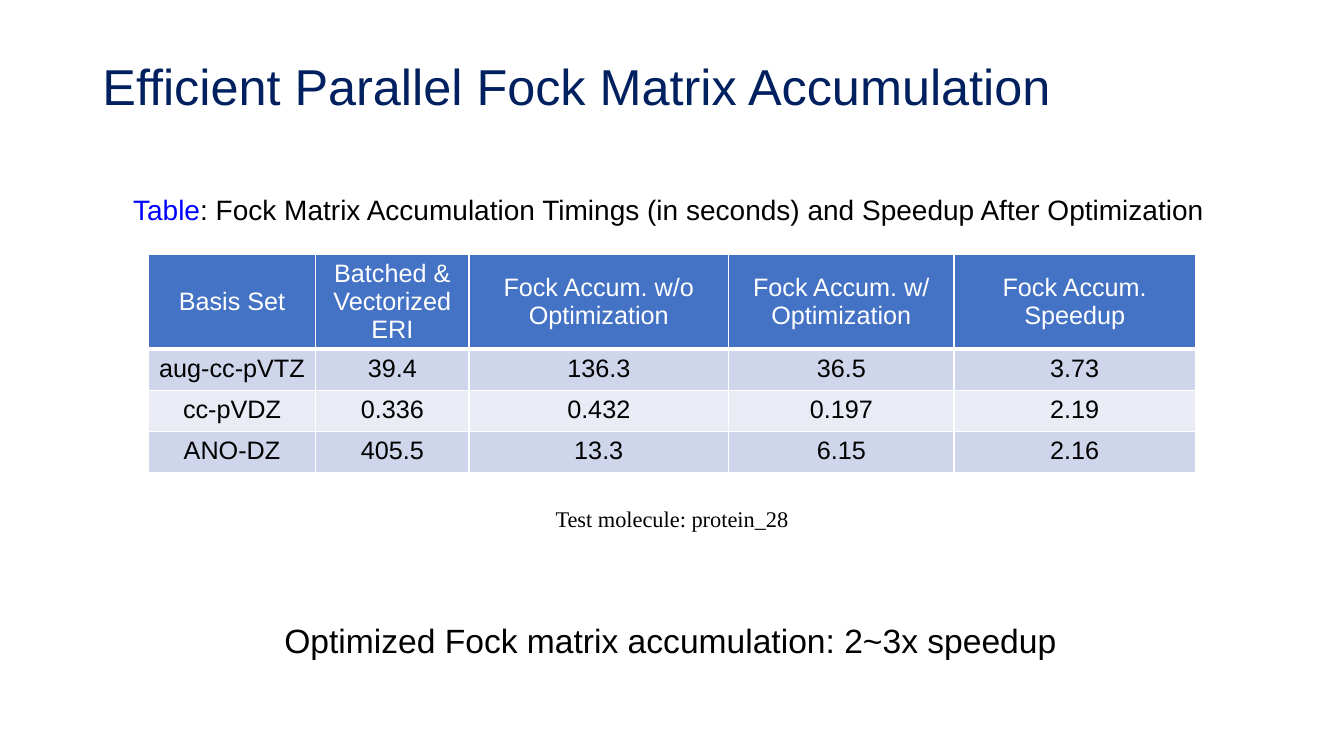
from lxml import etree
from pptx import Presentation
from pptx.dml.color import RGBColor
from pptx.enum.text import MSO_ANCHOR, MSO_AUTO_SIZE, PP_ALIGN
from pptx.oxml.ns import qn
from pptx.util import Pt

LEFT, CENTER = PP_ALIGN.LEFT, PP_ALIGN.CENTER
TOP, MIDDLE = MSO_ANCHOR.TOP, MSO_ANCHOR.MIDDLE
NO_FIT, GROW = MSO_AUTO_SIZE.NONE, MSO_AUTO_SIZE.SHAPE_TO_FIT_TEXT

COLORS = {
    "navy": "002060", "blue": "0000FF", "black": "000000", "white": "FFFFFF",
    "header": "4472C4", "odd_row": "CFD5EA", "even_row": "E9EBF5",
}

TITLE = "Efficient Parallel Fock Matrix Accumulation"
CAPTION_LABEL = "Table"
CAPTION = ": Fock Matrix Accumulation Timings (in seconds) and Speedup After Optimization"
MOLECULE = "Test molecule: protein_28"
CONCLUSION = "Optimized Fock matrix accumulation: 2~3x speedup"
TIMINGS = [
    ("Basis Set", "Batched & Vectorized ERI", "Fock Accum. w/o Optimization",
     "Fock Accum. w/ Optimization", "Fock Accum. Speedup"),
    ("aug-cc-pVTZ", "39.4", "136.3", "36.5", "3.73"),
    ("cc-pVDZ", "0.336", "0.432", "0.197", "2.19"),
    ("ANO-DZ", "405.5", "13.3", "6.15", "2.16"),
]

COLUMN_WIDTHS = (119.5, 109.5, 185.5, 161, 172.5)
HEADER_HEIGHT, ROW_HEIGHT = 66.5, 29.3
TABLE_LEFT, TABLE_TOP = 106, 181.7


def rgb(name):
    return RGBColor.from_string(COLORS[name])


def write(frame, text, size=18, color="black", font="Arial", align=LEFT):
    """Append a formatted run to the frame's first paragraph."""
    paragraph = frame.paragraphs[0]
    paragraph.alignment = align
    run = paragraph.add_run()
    run.text = text
    run.font.size = Pt(size)
    run.font.name = font
    run.font.bold = False
    run.font.color.rgb = rgb(color)


def add_text_box(slide, left, top, width, height, wrap=False):
    frame = slide.shapes.add_textbox(Pt(left), Pt(top), Pt(width), Pt(height)).text_frame
    frame.word_wrap = wrap
    frame.auto_size = GROW
    return frame


def set_borders(cell, **widths):
    """Draw white cell borders; call before the cell gets its fill."""
    properties = cell._tc.get_or_add_tcPr()
    for side, width in widths.items():
        line = etree.SubElement(properties, qn(f"a:ln{side}"), w=str(Pt(width)))
        fill = etree.SubElement(line, qn("a:solidFill"))
        etree.SubElement(fill, qn("a:srgbClr"), val=COLORS["white"])


def add_timings(slide):
    heights = [HEADER_HEIGHT] + [ROW_HEIGHT] * (len(TIMINGS) - 1)
    table = slide.shapes.add_table(
        len(TIMINGS), len(COLUMN_WIDTHS), Pt(TABLE_LEFT), Pt(TABLE_TOP),
        Pt(sum(COLUMN_WIDTHS)), Pt(sum(heights))).table
    for column, width in zip(table.columns, COLUMN_WIDTHS):
        column.width = Pt(width)
    for r, (values, height) in enumerate(zip(TIMINGS, heights)):
        table.rows[r].height = Pt(height)
        is_header = r == 0
        band = "header" if is_header else "odd_row" if r % 2 else "even_row"
        for c, value in enumerate(values):
            cell = table.cell(r, c)
            set_borders(cell, L=1, R=1, T=3 if r == 1 else 1, B=3 if is_header else 1)
            cell.fill.solid()
            cell.fill.fore_color.rgb = rgb(band)
            cell.vertical_anchor = MIDDLE if is_header else TOP
            write(cell.text_frame, value, align=CENTER,
                  color="white" if is_header else "black")


def main():
    deck = Presentation()
    deck.slide_width, deck.slide_height = Pt(960), Pt(540)
    slide = deck.slides.add_slide(deck.slide_layouts[5])

    title = slide.shapes.title
    title.left, title.top, title.width, title.height = Pt(66), Pt(29), Pt(828), Pt(69)
    title.text_frame.vertical_anchor = MIDDLE
    title.text_frame.auto_size = NO_FIT
    title.text_frame.paragraphs[0].line_spacing = 0.9
    write(title.text_frame, TITLE, size=36, color="navy")

    add_timings(slide)

    caption = add_text_box(slide, 88, 134, 783, 31.5)
    write(caption, CAPTION_LABEL, size=20, color="blue")
    write(caption, CAPTION, size=20)

    write(add_text_box(slide, 196, 439, 569, 36), CONCLUSION, size=24)
    write(add_text_box(slide, 299.5, 357, 361, 26.5, wrap=True), MOLECULE,
          size=16, font="Times New Roman", align=CENTER)

    deck.save("out.pptx")


if __name__ == "__main__":
    main()
